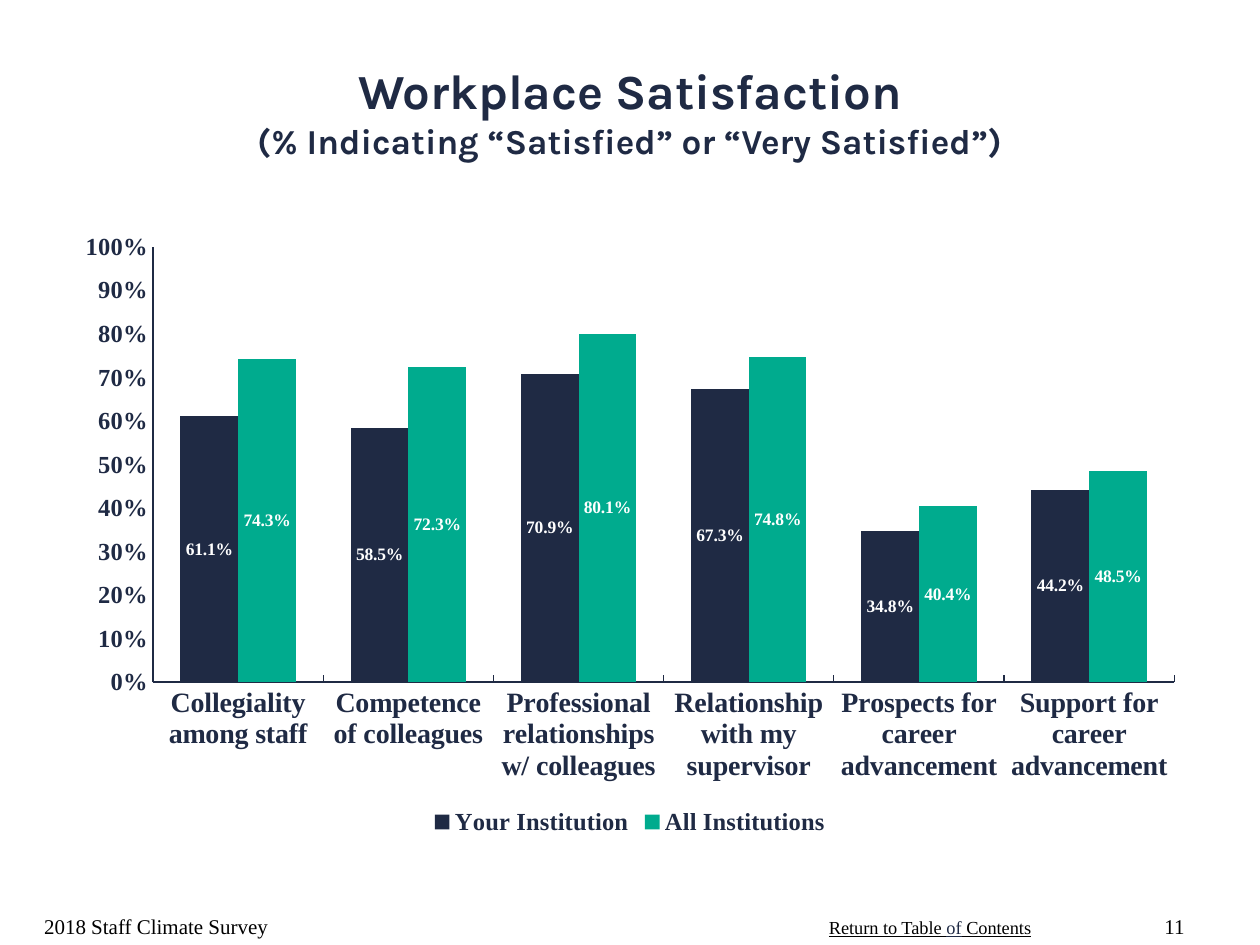
import dataclasses

import pptx
import pptx.chart.data
import pptx.dml.color
import pptx.enum.chart
import pptx.enum.text
import pptx.util

Cm = pptx.util.Cm
Align = pptx.enum.text.PP_ALIGN
Anchor = pptx.enum.text.MSO_ANCHOR


@dataclasses.dataclass(frozen=True)
class Theme:
    navy: str = "1F2A44"
    green: str = "00AB8E"
    black: str = "000000"
    white: str = "FFFFFF"
    head: str = "Karla"
    body: str = "Times New Roman"
    title: float = 28
    sub: float = 20
    cats: float = 16
    axis: float = 14
    foot: float = 12
    link: float = 10.5
    label: float = 10


def tint(code):
    return pptx.dml.color.RGBColor.from_string(code)


def style(font, size, color, name, bold=False, under=False):
    font.size = pptx.util.Pt(size)
    font.color.rgb = tint(color)
    font.name = name
    font.bold = bold
    font.underline = under


def write(para, text, **form):
    run = para.add_run()
    run.text = text
    style(run.font, **form)


class Deck:
    """Holds the theme and the current slide, and adds elements to it."""

    def __init__(self, theme):
        self.theme = theme
        self.file = pptx.Presentation()
        self.file.slide_width, self.file.slide_height = Cm(25.4), Cm(19.05)
        self.slide = self.file.slides.add_slide(self.file.slide_layouts[5])

    def title(self, box, main, sub):
        shape = self.slide.shapes.title
        shape.left, shape.top, shape.width, shape.height = map(Cm, box)
        frame = shape.text_frame
        frame.word_wrap = True
        frame.vertical_anchor = Anchor.MIDDLE
        para = frame.paragraphs[0]
        para.alignment = Align.CENTER
        form = dict(color=self.theme.navy, name=self.theme.head, bold=True)
        write(para, main, size=self.theme.title, **form)
        para.add_line_break()
        write(para, sub, size=self.theme.sub, **form)

    def text(self, box, parts, size, align=Align.LEFT, anchor=Anchor.BOTTOM,
             wrap=True, under=False):
        frame = self.slide.shapes.add_textbox(*map(Cm, box)).text_frame
        frame.word_wrap = wrap
        frame.vertical_anchor = anchor
        para = frame.paragraphs[0]
        para.alignment = align
        for words, color in parts:
            write(para, words, size=size, color=color,
                  name=self.theme.body, under=under)

    def chart(self, box, cats, series):
        look, kinds = self.theme, pptx.enum.chart
        data = pptx.chart.data.CategoryChartData(number_format="0.0%")
        data.categories = cats
        for name, vals, _ in series:
            data.add_series(name, vals)
        chart = self.slide.shapes.add_chart(
            kinds.XL_CHART_TYPE.COLUMN_CLUSTERED, *map(Cm, box), data).chart
        form = dict(color=look.navy, name=look.body, bold=True)
        style(chart.font, look.label, **form)
        chart.has_title = False
        chart.has_legend = True
        chart.legend.position = kinds.XL_LEGEND_POSITION.BOTTOM
        chart.legend.include_in_layout = False
        style(chart.legend.font, look.axis, **form)

        ticks = kinds.XL_TICK_MARK
        for axis, size, mark in (
            (chart.category_axis, look.cats, ticks.INSIDE),
            (chart.value_axis, look.axis, ticks.NONE),
        ):
            axis.has_major_gridlines = False
            axis.major_tick_mark = mark
            axis.minor_tick_mark = ticks.NONE
            axis.format.line.color.rgb = tint(look.navy)
            axis.format.line.width = pptx.util.Pt(0.75)
            style(axis.tick_labels.font, size, **form)
        scale = chart.value_axis
        scale.minimum_scale, scale.maximum_scale = 0, 1
        scale.major_unit = 0.1
        scale.tick_labels.number_format = "0%"
        scale.tick_labels.number_format_is_linked = False

        plot = chart.plots[0]
        plot.gap_width, plot.overlap = 95, 0
        plot.vary_by_categories = False
        for bars, (_, _, color) in zip(plot.series, series):
            bars.format.fill.solid()
            bars.format.fill.fore_color.rgb = tint(color)
            tags = bars.data_labels
            tags.show_value = True
            tags.position = kinds.XL_LABEL_POSITION.CENTER
            tags.number_format = "0.0%"
            tags.number_format_is_linked = False
            style(tags.font, look.label, look.white, look.body, bold=True)


def main():
    look = Theme()
    deck = Deck(look)
    deck.title((0, 0.64, 25.4, 3.18), "Workplace Satisfaction",
               "(% Indicating “Satisfied” or “Very Satisfied”)")
    deck.chart(
        (1.27, 4.45, 22.86, 12.5),
        ["Collegiality among staff", "Competence of colleagues",
         "Professional relationships w/ colleagues",
         "Relationship with my supervisor",
         "Prospects for career advancement",
         "Support for career advancement"],
        [("Your Institution",
          (0.611, 0.585, 0.709, 0.673, 0.348, 0.442), look.navy),
         ("All Institutions",
          (0.743, 0.723, 0.801, 0.748, 0.404, 0.485), look.green)])
    deck.text((16.46, 18.34, 4.62, 0.71),
              [("Return to Table ", look.black), ("of", look.navy),
               (" Contents", look.black)],
              look.link, anchor=Anchor.TOP, wrap=False, under=True)
    deck.text((0.64, 17.78, 8.05, 1.27),
              [("2018 Staff Climate Survey", look.black)], look.foot)
    deck.text((22.86, 17.78, 1.27, 1.27), [("11", look.black)], look.foot,
              align=Align.RIGHT)
    deck.file.save("out.pptx")


if __name__ == "__main__":
    main()
